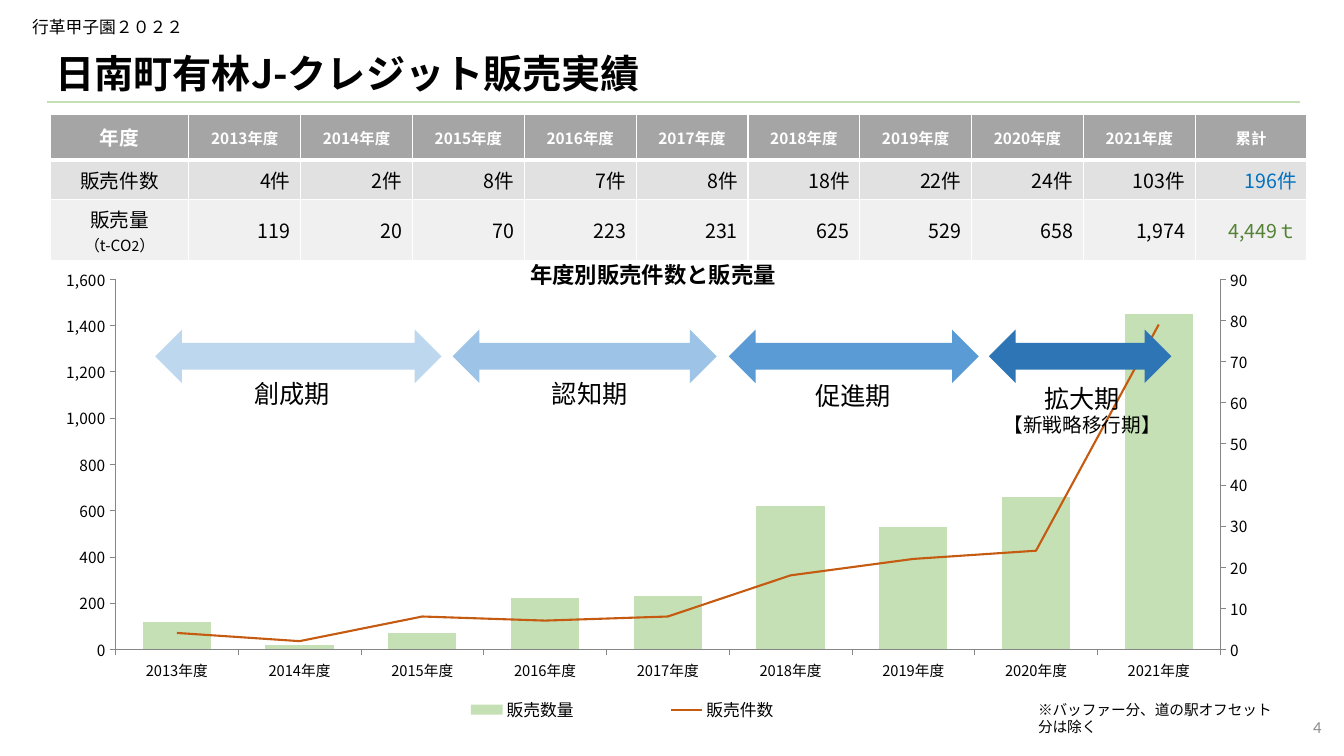
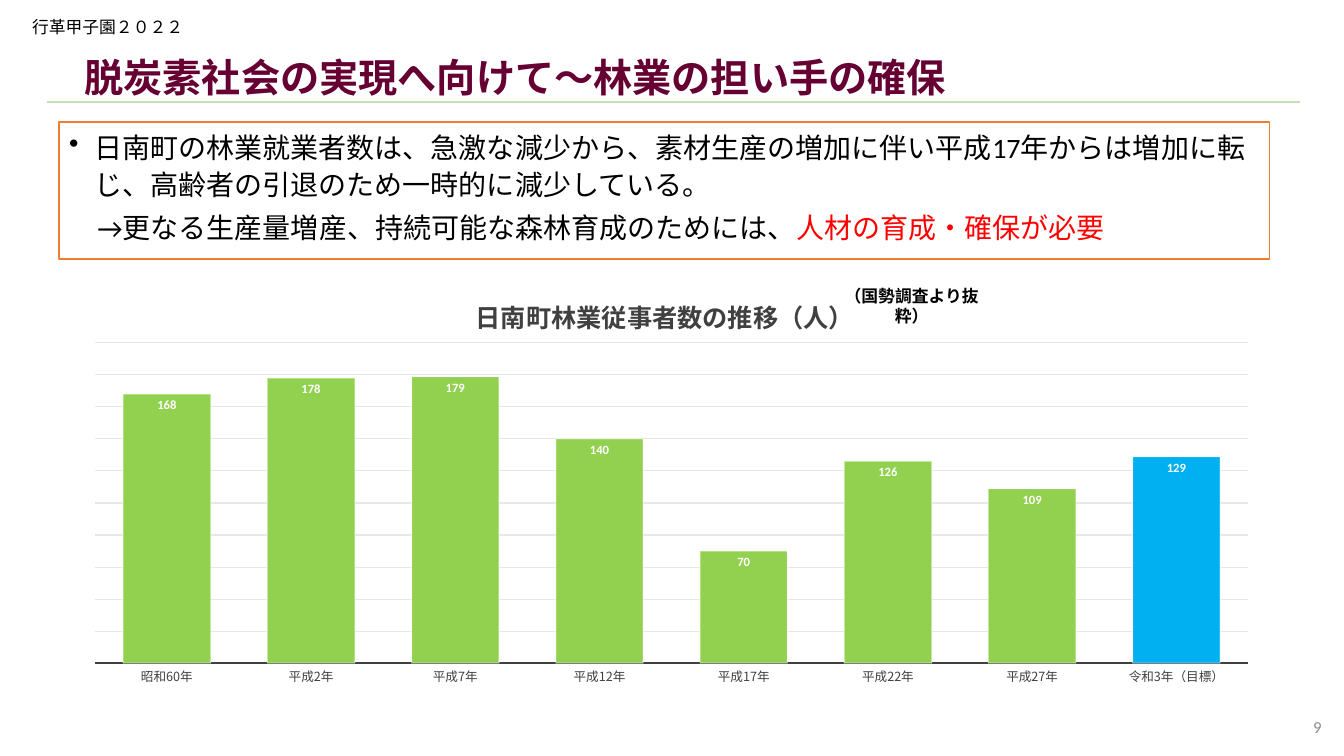
from copy import deepcopy

from lxml import etree
from pptx import Presentation
from pptx import util as u
from pptx.chart.axis import ValueAxis
from pptx.chart.data import CategoryChartData
from pptx.dml.color import RGBColor
from pptx.enum import chart as charts, shapes, text
from pptx.oxml import parse_xml
from pptx.oxml.ns import nsdecls, qn

WIDTH, HEIGHT = u.Inches(13.33), u.Inches(7.5)
GOTHIC, GOTHIC_SC, LATIN = "Noto Sans CJK JP", "Noto Sans CJK SC", "Calibri"
LEFT, CENTER, RIGHT = text.PP_ALIGN.LEFT, text.PP_ALIGN.CENTER, text.PP_ALIGN.RIGHT
TOP, MIDDLE = text.MSO_ANCHOR.TOP, text.MSO_ANCHOR.MIDDLE
COLORS = {
    "black": "000000", "white": "FFFFFF", "page": "8C8C8C", "rule": "C5E0B4",
    "wine": "660033", "red": "FF0000", "orange": "ED7D31", "blue": "0070C0",
    "green": "548235", "head": "A5A5A5", "count_row": "E1E1E1", "volume_row": "F0F0F0",
    "volume": "C5E0B4", "count": "C55A11", "axis": "868686", "dark": "404040",
    "grid": "E7E7E7", "workers": "92D050", "target": "00B0F0",
    "start": "BDD7EE", "known": "9DC3E6", "growth": "5B9BD5", "expand": "2E75B6",
}
YEARS = [f"{year}年度" for year in range(2013, 2022)]
COUNTS = [4, 2, 8, 7, 8, 18, 22, 24, 103]
VOLUMES = [119, 20, 70, 223, 231, 625, 529, 658, 1974]


def color(name):
    return RGBColor.from_string(COLORS[name])


def across(percent):
    return u.Emu(round(WIDTH * percent / 100))


def down(percent):
    return u.Emu(round(HEIGHT * percent / 100))


def area(left, top, width, height):
    """Turn percentages of the slide into a position and size."""
    return across(left), down(top), across(width), down(height)


def run_of(content, size, ink="black", bold=False, font=GOTHIC):
    return content, size, ink, bold, font


def style_font(font, size, ink, bold=False, name=GOTHIC):
    font.size, font.bold, font.name = u.Pt(size), bold, name
    font.color.rgb = color(ink)


def write(frame, paragraphs, align=LEFT):
    """Fill a text frame; each paragraph is a list of runs from run_of."""
    for index, runs in enumerate(paragraphs):
        paragraph = frame.add_paragraph() if index else frame.paragraphs[0]
        paragraph.alignment = align
        for content, size, ink, bold, name in runs:
            run = paragraph.add_run()
            run.text = content
            style_font(run.font, size, ink, bold, name)
            east_asian = etree.Element(qn("a:ea"))
            east_asian.set("typeface", name)
            run.font._element.find(qn("a:latin")).addnext(east_asian)


def add_text(slide, place, paragraphs, align=LEFT, anchor=TOP):
    frame = slide.shapes.add_textbox(*area(*place)).text_frame
    frame.word_wrap = True
    frame.vertical_anchor = anchor
    write(frame, paragraphs, align)
    return frame


def add_box(slide, kind, place, fill=None, line=None):
    shape = slide.shapes.add_shape(kind, *area(*place))
    shape.shadow.inherit = False
    if fill:
        shape.fill.solid()
        shape.fill.fore_color.rgb = color(fill)
    else:
        shape.fill.background()
    if line:
        style_line(shape.line, line, 1)
    else:
        shape.line.fill.background()
    return shape


def style_line(line, ink, width):
    line.color.rgb = color(ink)
    line.width = u.Pt(width)


def add_slide(presentation, title, title_place, title_ink, number):
    """Add a slide with the shared header, rule, title and page number."""
    slide = presentation.slides.add_slide(presentation.slide_layouts[6])
    add_text(slide, (1.65, 1.55, 48.75, 4), [[run_of("行革甲子園２０２２", 12, font=GOTHIC_SC)]])
    rule = slide.shapes.add_connector(
        shapes.MSO_CONNECTOR.STRAIGHT, across(3.53), down(13.47), across(96.75), down(13.47))
    style_line(rule.line, "rule", 1.5)
    etree.SubElement(rule._element.spPr, qn("a:effectLst"))
    frame = add_text(slide, title_place, [[run_of(title, 28, title_ink, True)]], anchor=MIDDLE)
    frame.paragraphs[0].line_spacing = 0.9
    add_text(slide, (76.5, 93.47, 22.58, 5.33),
             [[run_of(str(number), 12, "page", font=LATIN)]], RIGHT, MIDDLE)
    return slide


def set_borders(cell, bottom):
    properties = cell._tc.get_or_add_tcPr()
    for index, (side, width) in enumerate(zip("LRTB", (1, 1, 1, bottom))):
        properties.insert(index, parse_xml(
            f'<a:ln{side} {nsdecls("a")} w="{u.Pt(width)}"><a:solidFill>'
            f'<a:srgbClr val="{COLORS["white"]}"/></a:solidFill></a:ln{side}>'))


def fill_cell(cell, paragraphs, align, fill, bottom):
    cell.fill.solid()
    cell.fill.fore_color.rgb = color(fill)
    cell.vertical_anchor = MIDDLE
    write(cell.text_frame, paragraphs, align)
    set_borders(cell, bottom)


def add_sales_table(slide):
    heads = [[run_of(label, 11, "white", True)] for label in YEARS + ["累計"]]
    counts = [[run_of(f"{count}件", 14)] for count in COUNTS]
    volumes = [[run_of(f"{volume:,}", 14)] for volume in VOLUMES]
    unit = [run_of("（t-CO", 11), run_of("2", 10), run_of("）", 11)]
    rows = [
        ("head", 6.1, [[run_of("年度", 14, "white", True)]], heads, CENTER, 3),
        ("count_row", 5.2, [[run_of("販売件数", 14)]],
         counts + [[run_of("196件", 14, "blue")]], RIGHT, 1),
        ("volume_row", 8.1, [[run_of("販売量", 14)], unit],
         volumes + [[run_of("4,449ｔ", 14, "green")]], RIGHT, 1),
    ]
    table = slide.shapes.add_table(len(rows), 11, *area(3.75, 15.1, 93.5, 19.4)).table
    for index, column in enumerate(table.columns):
        column.width = across(8.32 if index else 10.3)
    for index, (fill, height, label, values, align, bottom) in enumerate(rows):
        table.rows[index].height = down(height)
        fill_cell(table.cell(index, 0), label, CENTER, fill, bottom)
        for column, runs in enumerate(values, 1):
            fill_cell(table.cell(index, column), [runs], align, fill, bottom)


def set_layout(parent, index, target="", **percents):
    """Place a chart part by percentages (x, y, w, h) of the chart's size."""
    old = parent.find(qn("c:layout"))
    if old is not None:
        parent.remove(old)
    settings = [("layoutTarget", target)] if target else []
    settings += [(f"{key}Mode", "edge") for key in "xy"]
    settings += [(key, percent / 100) for key, percent in percents.items()]
    body = "".join(f'<c:{key} val="{value}"/>' for key, value in settings)
    parent.insert(index, parse_xml(
        f'<c:layout {nsdecls("c")}><c:manualLayout>{body}</c:manualLayout></c:layout>'))


def add_column_chart(slide, place, categories, series, gap, plot_percents):
    data = CategoryChartData()
    data.categories = categories
    for name, values in series:
        data.add_series(name, values)
    chart = slide.shapes.add_chart(
        charts.XL_CHART_TYPE.COLUMN_CLUSTERED, *area(*place), data).chart
    chart.has_legend = chart.has_title = False
    plot = chart.plots[0]
    plot.gap_width, plot.vary_by_categories = gap, False
    set_layout(chart._chartSpace.chart.plotArea, 0, "inner", **plot_percents)
    return chart


def style_axis(axis, size, line, tick, width):
    style_font(axis.tick_labels.font, size, "dark" if line == "dark" else "black")
    style_line(axis.format.line, line, width)
    axis.major_tick_mark, axis.minor_tick_mark = tick, charts.XL_TICK_MARK.NONE


def scale_axis(axis, maximum, step):
    axis.minimum_scale, axis.maximum_scale, axis.major_unit = 0, maximum, step


def fill_format(target, ink):
    target.format.fill.solid()
    target.format.fill.fore_color.rgb = color(ink)


def style_bar(target, ink):
    """Fill a bar and give it a half-transparent white outline."""
    fill_format(target, ink)
    style_line(target.format.line, "white", 0.75)
    outline = target.format._element.spPr.find(qn("a:ln"))
    alpha = etree.SubElement(next(outline.iter(qn("a:srgbClr"))), qn("a:alpha"))
    alpha.set("val", "50000")


def move_to_right_axis(chart, maximum, step):
    """Turn the last column series into a line on an axis at the right."""
    plot_area = chart._chartSpace.chart.plotArea
    bars = plot_area.find(qn("c:barChart"))
    series = bars.findall(qn("c:ser"))[-1]
    for tag in ("c:invertIfNegative", "c:spPr"):
        for child in series.findall(qn(tag)):
            series.remove(child)
    line_chart = parse_xml(
        f'<c:lineChart {nsdecls("c")}><c:grouping val="stacked"/><c:varyColors val="0"/>'
        '<c:marker val="1"/><c:axId val="501"/><c:axId val="502"/></c:lineChart>')
    line_chart.insert(2, series)
    bars.addnext(line_chart)
    value_axis = plot_area.find(qn("c:valAx"))
    right, hidden = deepcopy(value_axis), deepcopy(plot_area.find(qn("c:catAx")))
    value_axis.addnext(right)
    right.addnext(hidden)
    changes = (
        (right, {"axId": "502", "crossAx": "501", "axPos": "r", "crosses": "max"}),
        (hidden, {"axId": "501", "crossAx": "502", "delete": "1"}),
    )
    for axis, values in changes:
        for tag, value in values.items():
            axis.find(qn(f"c:{tag}")).set("val", value)
    scale_axis(ValueAxis(right), maximum, step)


def add_sales_chart(slide):
    rounded = [round(volume, -1) for volume in VOLUMES[:-1]]
    chart = add_column_chart(
        slide, (3.9, 34.53, 90.23, 62.13), YEARS,
        [("販売数量", rounded + [1450]), ("販売件数", COUNTS[:-1] + [79])],
        80, {"x": 5.2, "y": 3.9, "w": 91.1, "h": 78.8})
    style_font(chart.font, 18, "black")
    style_axis(chart.category_axis, 10.5, "axis", charts.XL_TICK_MARK.OUTSIDE, 0.5)
    value_axis = chart.value_axis
    style_axis(value_axis, 11, "axis", charts.XL_TICK_MARK.OUTSIDE, 0.5)
    value_axis.has_major_gridlines = False
    value_axis.tick_labels.number_format = "#,##0"
    value_axis.tick_labels.number_format_is_linked = False
    scale_axis(value_axis, 1600, 200)
    move_to_right_axis(chart, 90, 10)
    columns, lines = chart.plots
    fill_format(columns.series[0], "volume")
    count_line = lines.series[0]
    count_line.smooth = False
    count_line.marker.style = charts.XL_MARKER_STYLE.NONE
    style_line(count_line.format.line, "count", 1.5)
    chart.has_legend = True
    chart.legend.position = charts.XL_LEGEND_POSITION.RIGHT
    chart.legend.include_in_layout = False
    style_font(chart.legend.font, 12, "black")
    set_layout(chart.legend._element, 1, x=27, y=92, w=40, h=7)


def add_workers_chart(slide):
    categories = ["昭和60年", "平成2年", "平成7年", "平成12年", "平成17年", "平成22年",
                  "平成27年", "令和3年（目標）"]
    chart = add_column_chart(
        slide, (4.35, 36.4, 90.08, 63.6), categories,
        [("Series 1", [168, 178, 179, 140, 70, 126, 109, 129])],
        65, {"x": 3, "y": 14.1, "w": 95.3, "h": 66.6})
    style_font(chart.font, 10, "black", name=LATIN)
    write(chart.chart_title.text_frame, [[run_of("日南町林業従事者数の推移（人）", 18, "dark", True)]])
    set_layout(chart.chart_title._element, 1, x=34.1, y=3.1)
    style_axis(chart.category_axis, 9, "dark", charts.XL_TICK_MARK.NONE, 1.25)
    value_axis = chart.value_axis
    scale_axis(value_axis, 200, 20)
    style_line(value_axis.major_gridlines.format.line, "grid", 0.75)
    value_axis.visible = False
    series = chart.plots[0].series[0]
    style_bar(series, "workers")
    style_bar(series.points[len(categories) - 1], "target")
    labels = series.data_labels
    labels.show_value, labels.position = True, charts.XL_LABEL_POSITION.INSIDE_END
    style_font(labels.font, 9, "white", True, LATIN)


def add_phases(slide):
    phases = [
        ("start", 11.55, 21.3, 15.08, 49.4, ["創成期"]),
        ("known", 33.68, 19.65, 37.2, 49.4, ["認知期"]),
        ("growth", 54.23, 18.6, 56.78, 49.7, ["促進期"]),
        ("expand", 73.58, 13.58, 73.85, 50, ["拡大期", "【新戦略移行期】"]),
    ]
    for fill, left, width, label_left, label_top, lines in phases:
        add_box(slide, shapes.MSO_SHAPE.LEFT_RIGHT_ARROW, (left, 43.6, width, 7.07), fill)
        paragraphs = [[run_of(line, size)] for line, size in zip(lines, (18, 14))]
        add_text(slide, (label_left, label_top, 13.35, 5.33), paragraphs, CENTER)


def add_summary(slide):
    box = add_box(slide, shapes.MSO_SHAPE.RECTANGLE, (4.4, 16.13, 90.08, 18.13), "white", "orange")
    frame = box.text_frame
    frame.word_wrap, frame.vertical_anchor = True, TOP
    write(frame, [
        [run_of("日南町の林業就業者数は、急激な減少から、素材生産の増加に伴い平成17年からは増加に転じ、"
                "高齢者の引退のため一時的に減少している。", 20, font=LATIN)],
        [run_of("→更なる生産量増産、持続可能な森林育成のためには、", 20, font=LATIN),
         run_of("人材の育成・確保が必要", 20, "red", font=LATIN)],
    ])
    fact, need = frame.paragraphs
    fact.line_spacing, need.line_spacing = 1.1, 0.9
    need.space_before = u.Pt(10)
    for paragraph, margin, indent in ((fact, 0.25, -0.25), (need, 0.28, 0)):
        properties = paragraph._p.get_or_add_pPr()
        properties.set("marL", str(u.Inches(margin)))
        properties.set("indent", str(u.Inches(indent)))
    etree.SubElement(fact._p.get_or_add_pPr(), qn("a:buChar")).set("char", "•")


def add_sales_slide(presentation):
    slide = add_slide(presentation, "日南町有林J-クレジット販売実績",
                      (3.38, 6.8, 85.9, 6.53), "black", 4)
    add_sales_table(slide)
    add_sales_chart(slide)
    add_text(slide, (76.5, 92, 19.05, 3.73), [[run_of("※バッファー分、道の駅オフセット分は除く", 10.5)]])
    add_text(slide, (37.2, 33.87, 22.8, 5.33), [[run_of("年度別販売件数と販売量", 16, bold=True)]], CENTER)
    add_phases(slide)


def add_workers_slide(presentation):
    slide = add_slide(presentation, "脱炭素社会の実現へ向けて～林業の担い手の確保",
                      (5.55, 5.2, 79.73, 10.8), "wine", 9)
    add_summary(slide)
    add_workers_chart(slide)
    origin = add_box(slide, shapes.MSO_SHAPE.ROUNDED_RECTANGLE, (61.2, 38.53, 13.28, 3.87))
    origin.text_frame.word_wrap = True
    origin.text_frame.vertical_anchor = MIDDLE
    write(origin.text_frame, [[run_of("（国勢調査より抜粋）", 12, bold=True, font=LATIN)]], CENTER)


def main():
    presentation = Presentation()
    presentation.slide_width, presentation.slide_height = WIDTH, HEIGHT
    add_sales_slide(presentation)
    add_workers_slide(presentation)
    presentation.save("out.pptx")


if __name__ == "__main__":
    main()
